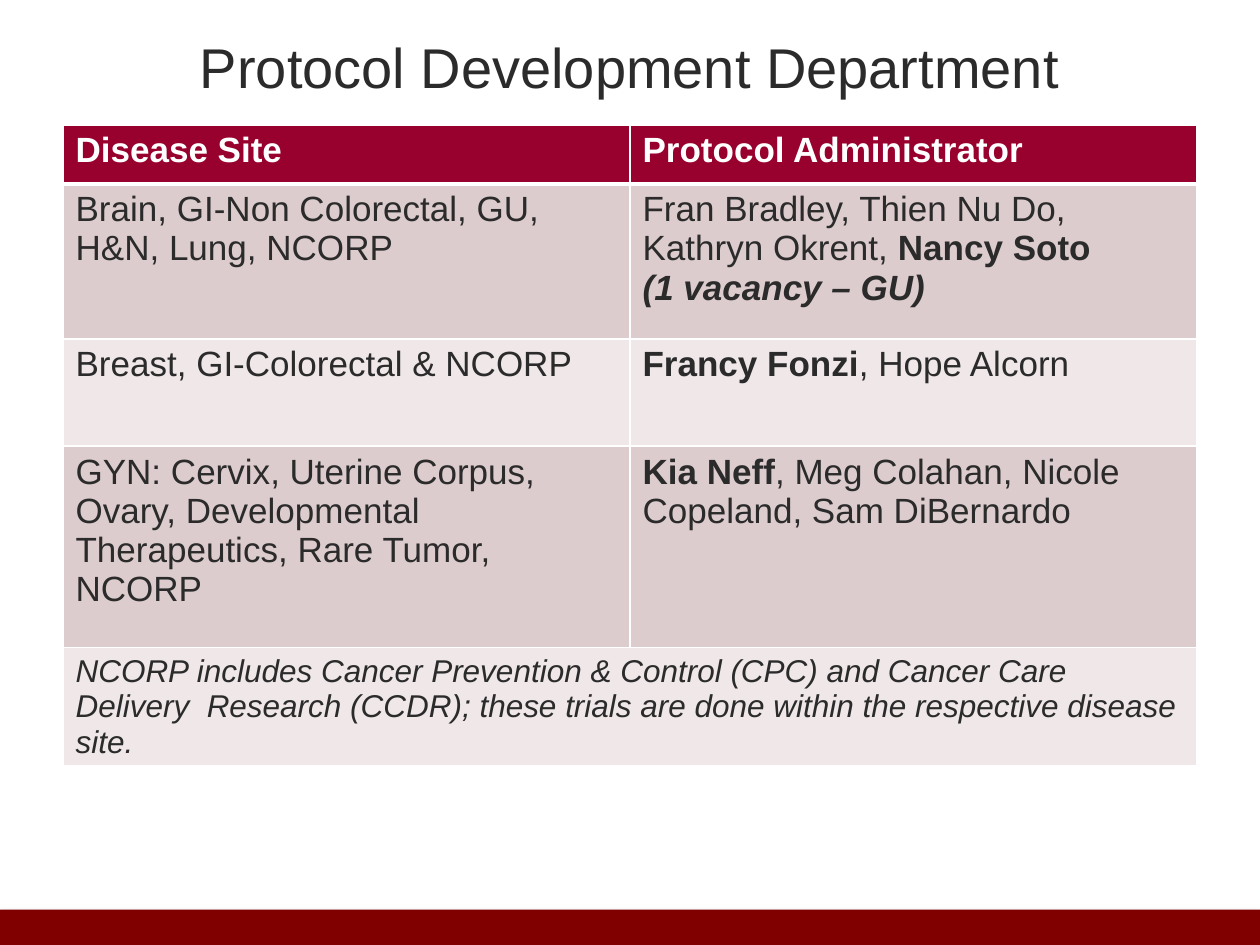
from dataclasses import dataclass

from lxml.etree import SubElement
from pptx import Presentation
from pptx.dml.color import RGBColor
from pptx.enum.shapes import MSO_SHAPE as Shape
from pptx.enum.text import MSO_ANCHOR as Anchor, PP_ALIGN as Align
from pptx.oxml import parse_xml
from pptx.oxml.ns import nsdecls, qn
from pptx.util import Inches, Pt

FONT = "Arial"
WHITE = RGBColor(0xFF, 0xFF, 0xFF)
INK = RGBColor(0x2B, 0x2B, 0x2B)
MAROON = RGBColor(0x80, 0x00, 0x00)
CRIMSON = RGBColor(0x98, 0x01, 0x2E)
ROSE = RGBColor(0xDD, 0xCC, 0xCD)
PALE = RGBColor(0xEF, 0xE7, 0xE8)

SLIDE_W, SLIDE_H = Inches(10), Inches(7.5)
MARGIN = int(SLIDE_W * 0.05)
CONTENT_W = SLIDE_W - 2 * MARGIN
COLUMNS = 2


@dataclass(frozen=True)
class Run:
    text: str
    bold: bool = False
    italic: bool = False


@dataclass(frozen=True)
class Row:
    height: float
    fill: RGBColor
    cells: list[list[list[Run]]]  # cells > paragraphs > runs
    color: RGBColor = INK
    size: int = 20
    rule: int = 1  # width of the line below, in points


ROWS = [
    Row(0.47, CRIMSON, [
        [[Run("Disease Site", bold=True)]],
        [[Run("Protocol Administrator", bold=True)]],
    ], color=WHITE, rule=3),
    Row(1.23, ROSE, [
        [[Run("Brain, GI-Non Colorectal, GU, H&N, Lung, NCORP")]],
        [[Run("Fran Bradley, Thien Nu Do, Kathryn Okrent, "),
          Run("Nancy Soto", bold=True)],
         [Run("(1 vacancy – GU)", bold=True, italic=True)]],
    ]),
    Row(0.85, PALE, [
        [[Run("Breast, GI-Colorectal & NCORP")]],
        [[Run("Francy Fonzi", bold=True), Run(", Hope Alcorn")]],
    ]),
    Row(1.6, ROSE, [
        [[Run("GYN: Cervix, Uterine Corpus, Ovary, Developmental "
              "Therapeutics, Rare Tumor, NCORP")]],
        [[Run("Kia Neff", bold=True),
          Run(", Meg Colahan, Nicole Copeland, Sam DiBernardo")]],
    ]),
    Row(0.72, PALE, [
        [[Run("NCORP includes Cancer Prevention & Control (CPC) and Cancer "
              "Care Delivery  Research (CCDR); these trials are done within "
              "the respective disease site.", italic=True)]],
    ], size=18),
]


def add_run(p, run: Run, size: int, color: RGBColor) -> None:
    r = p.add_run()
    r.text = run.text
    r.font.name = FONT
    r.font.size = Pt(size)
    r.font.bold = run.bold
    r.font.italic = run.italic
    r.font.color.rgb = color


def set_borders(cell, top: int, bottom: int) -> None:
    tc_pr = cell._tc.get_or_add_tcPr()
    widths = {"lnL": 1, "lnR": 1, "lnT": top, "lnB": bottom}
    for i, (tag, width) in enumerate(widths.items()):
        ln = parse_xml(f'<a:{tag} {nsdecls("a")} w="{Pt(width)}"/>')
        fill = SubElement(ln, qn("a:solidFill"))
        SubElement(fill, qn("a:srgbClr")).set("val", str(WHITE))
        tc_pr.insert(i, ln)


def fill_cell(cell, row: Row, paragraphs: list[list[Run]]) -> None:
    cell.fill.solid()
    cell.fill.fore_color.rgb = row.fill
    tf = cell.text_frame
    for i, runs in enumerate(paragraphs):
        p = tf.paragraphs[0] if i == 0 else tf.add_paragraph()
        for run in runs:
            add_run(p, run, row.size, row.color)


def add_footer_bar(s) -> None:
    height = Inches(0.28)
    bar = s.shapes.add_shape(Shape.RECTANGLE, 0, SLIDE_H - height, SLIDE_W, height)
    bar.fill.solid()
    bar.fill.fore_color.rgb = MAROON
    bar.line.fill.background()
    # Soft shadow straight below
    bar._element.spPr.append(parse_xml(
        f'<a:effectLst {nsdecls("a")}><a:outerShdw blurRad="{Pt(3.1)}" '
        f'dist="{Pt(1.8)}" dir="5400000" rotWithShape="0"><a:srgbClr val="000000">'
        '<a:alpha val="35000"/></a:srgbClr></a:outerShdw></a:effectLst>'))


def add_title(s, text: str) -> None:
    title = s.shapes.title
    title.left, title.top = MARGIN, Inches(0.19)
    title.width, title.height = CONTENT_W, Inches(0.67)
    tf = title.text_frame
    tf.vertical_anchor = Anchor.MIDDLE
    p = tf.paragraphs[0]
    p.alignment = Align.CENTER
    add_run(p, Run(text), 32, INK)


def add_staff_table(s, rows: list[Row]) -> None:
    height = Inches(sum(row.height for row in rows))
    table = s.shapes.add_table(
        len(rows), COLUMNS, MARGIN, Inches(0.99), CONTENT_W, height).table
    rule_above = 1
    for i, row in enumerate(rows):
        table.rows[i].height = Inches(row.height)
        if len(row.cells) < COLUMNS:
            table.cell(i, 0).merge(table.cell(i, COLUMNS - 1))
        for j, paragraphs in enumerate(row.cells):
            fill_cell(table.cell(i, j), row, paragraphs)
        for j in range(COLUMNS):
            set_borders(table.cell(i, j), rule_above, row.rule)
        rule_above = row.rule


def main() -> None:
    prs = Presentation()
    prs.slide_width, prs.slide_height = SLIDE_W, SLIDE_H
    s = prs.slides.add_slide(prs.slide_layouts[5])  # Title Only
    s.background.fill.solid()
    s.background.fill.fore_color.rgb = WHITE
    add_footer_bar(s)
    add_title(s, "Protocol Development Department")
    add_staff_table(s, ROWS)
    prs.save("out.pptx")


if __name__ == "__main__":
    main()
